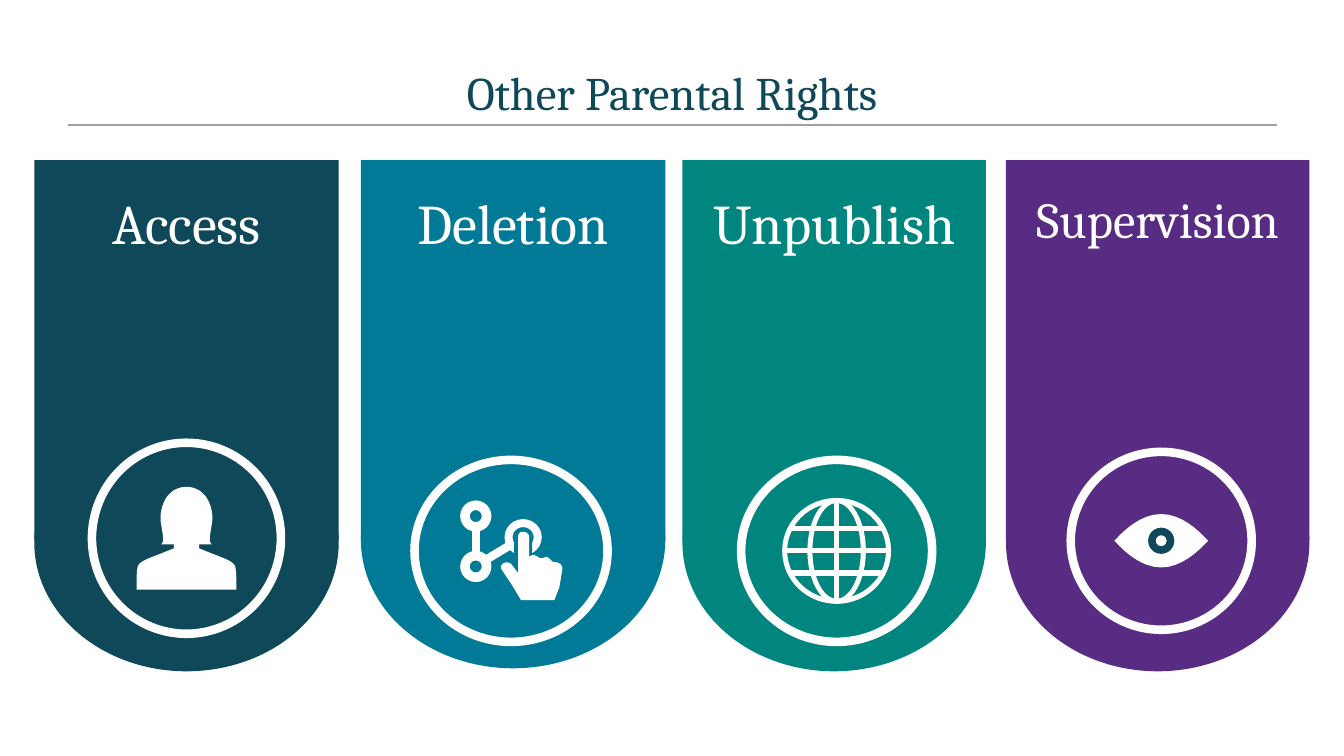
from dataclasses import dataclass
from typing import Callable

from lxml.etree import SubElement
from pptx import Presentation
from pptx.dml.color import RGBColor
from pptx.enum.shapes import MSO_CONNECTOR, MSO_SHAPE
from pptx.enum.text import MSO_ANCHOR, PP_ALIGN
from pptx.oxml.ns import qn
from pptx.util import Emu, Inches, Pt

Point = tuple[float, float]


@dataclass(frozen=True)
class Theme:
    font: str = "Cambria"
    title_size: float = 33.3
    heading: float = 40
    long_heading: float = 36
    navy: str = "0F4859"
    blue: str = "007A96"
    green: str = "00867F"
    purple: str = "582C83"
    white: str = "FFFFFF"
    rule: str = "A0A0A0"


T = Theme()


@dataclass(frozen=True)
class Panel:
    text: str
    size: float
    color: str
    left: float
    width: float
    curve_top: float
    ring: tuple[float, float, float, float]  # centre x, centre y, width, height
    icon: Callable


# The grid has ten square cells to the inch.
def cell(n: float) -> Emu:
    return Inches(n / 10)


def rgb(color: str) -> RGBColor:
    return RGBColor.from_string(color)


def paint(sp, color: str):
    sp.shadow.inherit = False
    sp.fill.solid()
    sp.fill.fore_color.rgb = rgb(color)
    sp.line.fill.background()
    return sp


def add_centred(shapes, kind, center: Point, w: float, h: float, color: str):
    x, y = center
    return paint(shapes.add_shape(kind, cell(x - w / 2), cell(y - h / 2), cell(w), cell(h)), color)


def add_ring(shapes, center: Point, w: float, h: float, band: float, color: str = T.white) -> None:
    sp = add_centred(shapes, MSO_SHAPE.DONUT, center, w, h, color)
    sp.adjustments[0] = band / min(w, h)


def add_line(shapes, start: Point, end: Point, width: float, color: str = T.white) -> None:
    c = shapes.add_connector(MSO_CONNECTOR.STRAIGHT, *(cell(v) for v in (*start, *end)))
    c.line.color.rgb = rgb(color)
    c.line.width = Pt(width)
    SubElement(c._element.spPr, qn("a:effectLst"))


def trace(start: Point, segments: list[tuple[Point, ...]], steps: int = 8) -> list[Point]:
    """Turn lines (one point) and cubic curves (three points) into an outline."""
    points = [start]
    for seg in segments:
        if len(seg) == 1:
            points.append(seg[0])
            continue
        p0, (p1, p2, p3) = points[-1], seg
        for t in (i / steps for i in range(1, steps + 1)):
            u = 1 - t
            points.append(tuple(
                u**3 * a + 3 * u * u * t * b + 3 * u * t * t * c + t**3 * d
                for a, b, c, d in zip(p0, p1, p2, p3)))
    return points


def mirror(points: list[Point]) -> list[Point]:
    return points + [(-x, y) for x, y in reversed(points)]


def add_outline(shapes, center: Point, points: list[Point], color: str = T.white) -> None:
    placed = [(cell(center[0] + x), cell(center[1] + y)) for x, y in points]
    fb = shapes.build_freeform(*placed[0])
    fb.add_line_segments(placed[1:], close=True)
    paint(fb.convert_to_shape(), color)


# Icons, drawn around the centre of their ring
def draw_person(shapes, center: Point, color: str) -> None:
    half = trace((0, -5.1), [
        ((0.6, -5.1), (1, -4.9), (1.35, -4.7)),
        ((1.55, -4.5), (1.8, -4.3), (1.95, -4.1)),
        ((2.5, -3.3), (2.7, -2.2), (2.5, -1.3)),
        ((2.2, 0.4), (2.3, 0.3), (2.5, 0.6)),
        ((1.25, 0.6),), ((1.25, 1),),
        ((1.25, 1), (1.5, 1.1), (2.5, 1.5)),
        ((3.5, 1.9), (4.5, 2.2), (4.8, 2.7)),
        ((5, 3.1), (4.95, 5.1), (4.95, 5.1)),
    ])
    add_outline(shapes, center, mirror(half))


def draw_touch(shapes, center: Point, color: str) -> None:
    x, y = center
    for node_y in (y - 3.45, y + 1.55):
        add_ring(shapes, (x - 3.5, node_y), 3.1, 3.1, 0.95)
    add_line(shapes, (x - 3.5, y - 2.1), (x - 3.5, y + 0.2), 6)
    add_line(shapes, (x - 2.35, y + 0.8), (x - 0.2, y - 0.5), 6)
    # Button with a gap around the finger
    add_ring(shapes, (x + 1.2, y - 1.35), 3.7, 3.6, 0.8)
    add_centred(shapes, MSO_SHAPE.RECTANGLE, (x + 1.2, y - 0.2), 1.8, 2.4, color)
    hand = trace((1.8, 0.6), [
        ((1.8, -1.4),),
        ((1.8, -1.7), (1.5, -1.9), (1.2, -1.9)),
        ((0.9, -1.9), (0.7, -1.7), (0.7, -1.4)),
        ((0.7, 2.2),), ((0.1, 1.4),),
        ((-0.1, 1.1), (-0.5, 1.1), (-0.7, 1.2)),
        ((-1, 1.3), (-1.1, 1.7), (-0.9, 1.9)),
        ((0.1, 3.4),), ((1, 4.9),), ((4.3, 4.9),), ((4.8, 3.6),), ((5.1, 1.8),),
        ((5.1, 1.3), (4.7, 1.1), (4.2, 1.1)),
        ((4.1, 1.1), (3.9, 0.8), (3.6, 0.6)),
        ((3.3, 0.6), (3.1, 0.8), (2.9, 0.7)),
        ((2.7, 0.7), (2.5, 0.4), (2.2, 0.4)),
        ((2.1, 0.4), (1.9, 0.5), (1.8, 0.6)),
    ])
    add_outline(shapes, center, hand)


def draw_globe(shapes, center: Point, color: str) -> None:
    x, y = center
    for width in (10.8, 5.8):
        add_ring(shapes, center, width, 10.5, 0.5)
    add_line(shapes, (x, y - 5), (x, y + 5), 4)
    for dy, reach in ((-2.2, 4.7), (0, 5.2), (2.2, 4.7)):
        add_line(shapes, (x - reach, y + dy), (x + reach, y + dy), 3.6)


def draw_eye(shapes, center: Point, color: str) -> None:
    lid = trace((0, -2.65), [((2.05, -2.65), (3.75, -0.95), (4.4, -0.25)), ((4.65, 0),)])
    side = lid + [(x, -y) for x, y in reversed(lid)]
    add_outline(shapes, center, mirror(side))
    add_ring(shapes, center, 2.6, 2.6, 0.75, T.navy)


PANELS = [
    Panel("Access", T.heading, T.navy, 3.4, 30.2, 41.1, (18.5, 53.4, 19.6, 19.8), draw_person),
    Panel("Deletion", T.heading, T.blue, 35.8, 30.2, 40.8, (50.7, 54.65, 20, 18.9), draw_touch),
    Panel("Unpublish", T.heading, T.green, 67.7, 30.1, 41.1, (83, 54.65, 19.8, 18.9), draw_globe),
    Panel("Supervision", T.long_heading, T.purple, 99.8, 30.1, 41.1,
          (115.2, 53.65, 18.8, 18.5), draw_eye),
]


def set_text(sp, text: str, size: float, color: str, anchor: MSO_ANCHOR) -> None:
    tf = sp.text_frame
    tf.word_wrap = True
    tf.vertical_anchor = anchor
    p = tf.paragraphs[0]
    p.text = text
    p.alignment = PP_ALIGN.CENTER
    p.font.name, p.font.size, p.font.color.rgb = T.font, Pt(size), rgb(color)


def draw_panel(s, panel: Panel) -> None:
    shapes = s.shapes.add_group_shape().shapes
    left, width = cell(panel.left), cell(panel.width)
    sp = paint(shapes.add_shape(MSO_SHAPE.RECTANGLE, left, cell(15.9), width, cell(37.7)),
               panel.color)
    set_text(sp, panel.text, panel.size, T.white, MSO_ANCHOR.TOP)
    sp.text_frame.margin_top = cell(2.8)
    paint(shapes.add_shape(MSO_SHAPE.OVAL, left, cell(panel.curve_top), width, cell(25.5)),
          panel.color)
    x, y, w, h = panel.ring
    add_ring(shapes, (x, y), w, h, 0.85)
    panel.icon(shapes, (x, y), panel.color)


def main() -> None:
    prs = Presentation()
    prs.slide_width, prs.slide_height = cell(133.33), cell(75)
    s = prs.slides.add_slide(prs.slide_layouts[5])

    # Title and rule
    title = s.shapes.title
    title.left, title.top, title.width, title.height = map(cell, (6.7, 5.8, 120, 6.7))
    set_text(title, "Other Parental Rights", T.title_size, T.navy, MSO_ANCHOR.MIDDLE)
    add_line(s.shapes, (6.7, 12.4), (126.7, 12.4), 1, T.rule)

    # Panels
    for panel in PANELS:
        draw_panel(s, panel)
    prs.save("out.pptx")


if __name__ == "__main__":
    main()
